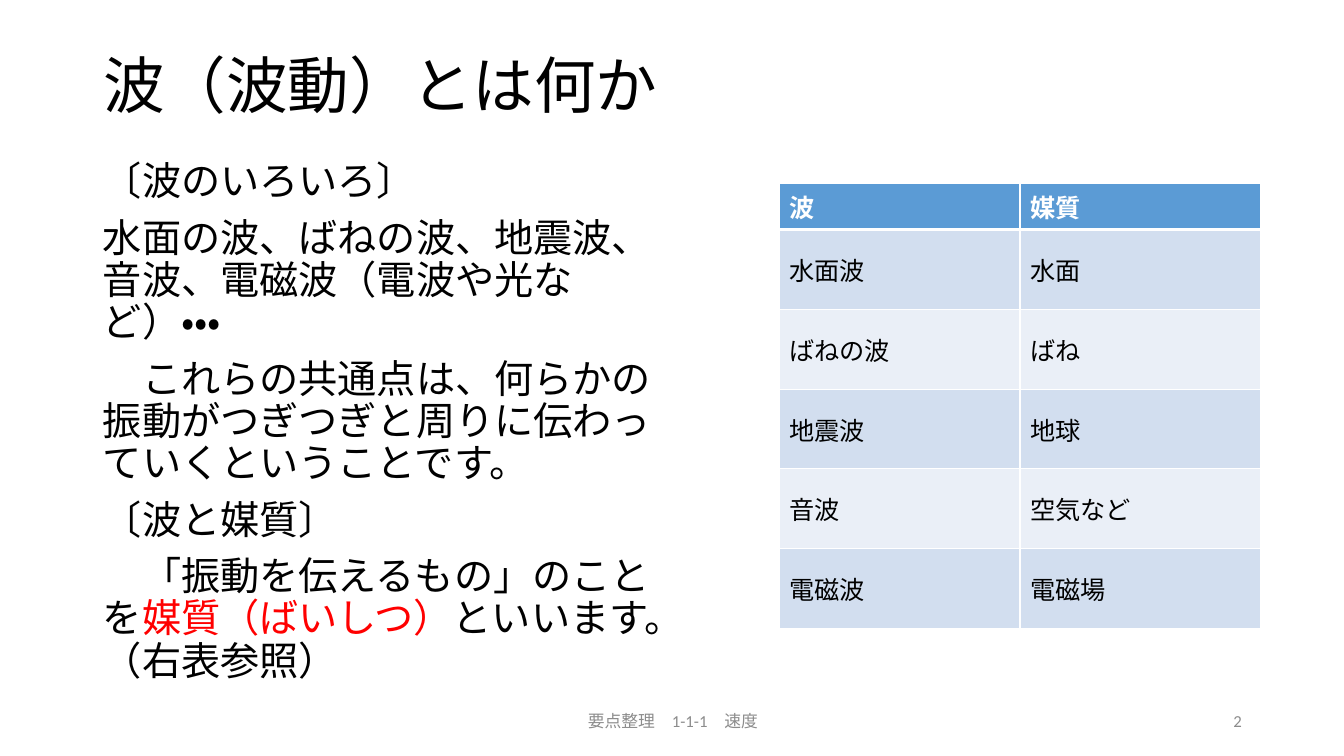
from lxml import etree
from pptx import Presentation
from pptx.dml.color import RGBColor
from pptx.enum.lang import MSO_LANGUAGE_ID
from pptx.enum.text import MSO_ANCHOR, MSO_AUTO_SIZE, PP_ALIGN
from pptx.oxml.ns import qn
from pptx.util import Pt

PX = 914400 / 100.8
JAPANESE = MSO_LANGUAGE_ID.JAPANESE
LEFT, CENTER, RIGHT = PP_ALIGN.LEFT, PP_ALIGN.CENTER, PP_ALIGN.RIGHT
TOP, MIDDLE = MSO_ANCHOR.TOP, MSO_ANCHOR.MIDDLE
NO_FIT = MSO_AUTO_SIZE.NONE
BLACK, WHITE, RED, GRAY = "000000", "FFFFFF", "FF0000", "8C8C8C"
HEADER_BLUE, BAND_DARK, BAND_LIGHT = "5B9BD5", "D2DEEF", "EAEFF7"


def px(length):
    return round(length * PX)


def add_span(para, text, size, color, bold=False):
    span = para.add_run()
    span.text = text
    font_format = {"name": "Calibri", "size": Pt(size), "bold": bold,
                   "language_id": JAPANESE}
    for name, value in font_format.items():
        setattr(span.font, name, value)
    span.font.color.rgb = RGBColor.from_string(color)


deck = Presentation()
deck.slide_width, deck.slide_height = px(1344), px(756)
page = deck.slides.add_slide(deck.slide_layouts[5])

# Title, body, footer and page number
body = [
    [("〔波のいろいろ〕", BLACK)],
    [("水面の波、ばねの波、地震波、音波、電磁波（電波や光など）・・・", BLACK)],
    [("　これらの共通点は、何らかの振動がつぎつぎと周りに伝わっていくということです。", BLACK)],
    [("〔波と媒質〕", BLACK)],
    [("　「振動を伝えるもの」のことを", BLACK), ("媒質（ばいしつ）", RED),
     ("といいます。（右表参照）", BLACK)],
]
texts = [
    (page.shapes.title, (93, 40, 1159, 97), MIDDLE, LEFT, 44, 0.9,
     [[("波（波動）とは何か", BLACK)]]),
    (None, (93, 157, 572, 559), TOP, LEFT, 28, 0.9, body),
    (None, (446, 701, 454, 40), MIDDLE, CENTER, 12, 1.0,
     [[("要点整理　1-1-1　速度", GRAY)]]),
    (None, (950, 701, 302, 40), MIDDLE, RIGHT, 12, 1.0, [[("2", GRAY)]]),
]
for box, place, anchor, align, size, line_spacing, paragraphs in texts:
    left, top, width, height = map(px, place)
    if box is None:
        box = page.shapes.add_textbox(left, top, width, height)
    box.left, box.top, box.width, box.height = left, top, width, height
    frame = box.text_frame
    frame_format = {"word_wrap": True, "auto_size": NO_FIT, "vertical_anchor": anchor}
    for name, value in frame_format.items():
        setattr(frame, name, value)
    for index, spans in enumerate(paragraphs):
        para = frame.add_paragraph() if index else frame.paragraphs[0]
        para.alignment = align
        para.line_spacing = line_spacing
        para.space_before = Pt(10 if index else 0)
        for text, color in spans:
            add_span(para, text, size, color)

# Table of waves and their media
waves = [
    ("波", "媒質"),
    ("水面波", "水面"),
    ("ばねの波", "ばね"),
    ("地震波", "地球"),
    ("音波", "空気など"),
    ("電磁波", "電磁場"),
]
table_height, header_height = 445, 46
row_height = (table_height - header_height) / (len(waves) - 1)
table = page.shapes.add_table(len(waves), 2, px(779), px(183),
                              px(482), px(table_height)).table
for row, labels in enumerate(waves):
    header = row == 0
    table.rows[row].height = px(header_height if header else row_height)
    if header:
        fill = HEADER_BLUE
    else:
        fill = BAND_DARK if row % 2 else BAND_LIGHT
    borders = {"lnL": 1, "lnR": 1, "lnT": 3 if row == 1 else 1, "lnB": 3 if header else 1}
    for column, label in enumerate(labels):
        cell = table.cell(row, column)
        cell.vertical_anchor = MIDDLE
        properties = cell._tc.get_or_add_tcPr()
        for side, points in borders.items():
            line = etree.SubElement(properties, qn("a:" + side), w=str(Pt(points)))
            solid = etree.SubElement(line, qn("a:solidFill"))
            etree.SubElement(solid, qn("a:srgbClr"), val=WHITE)
        cell.fill.solid()
        cell.fill.fore_color.rgb = RGBColor.from_string(fill)
        add_span(cell.text_frame.paragraphs[0], label, 18,
                 WHITE if header else BLACK, bold=header)

deck.save("out.pptx")
